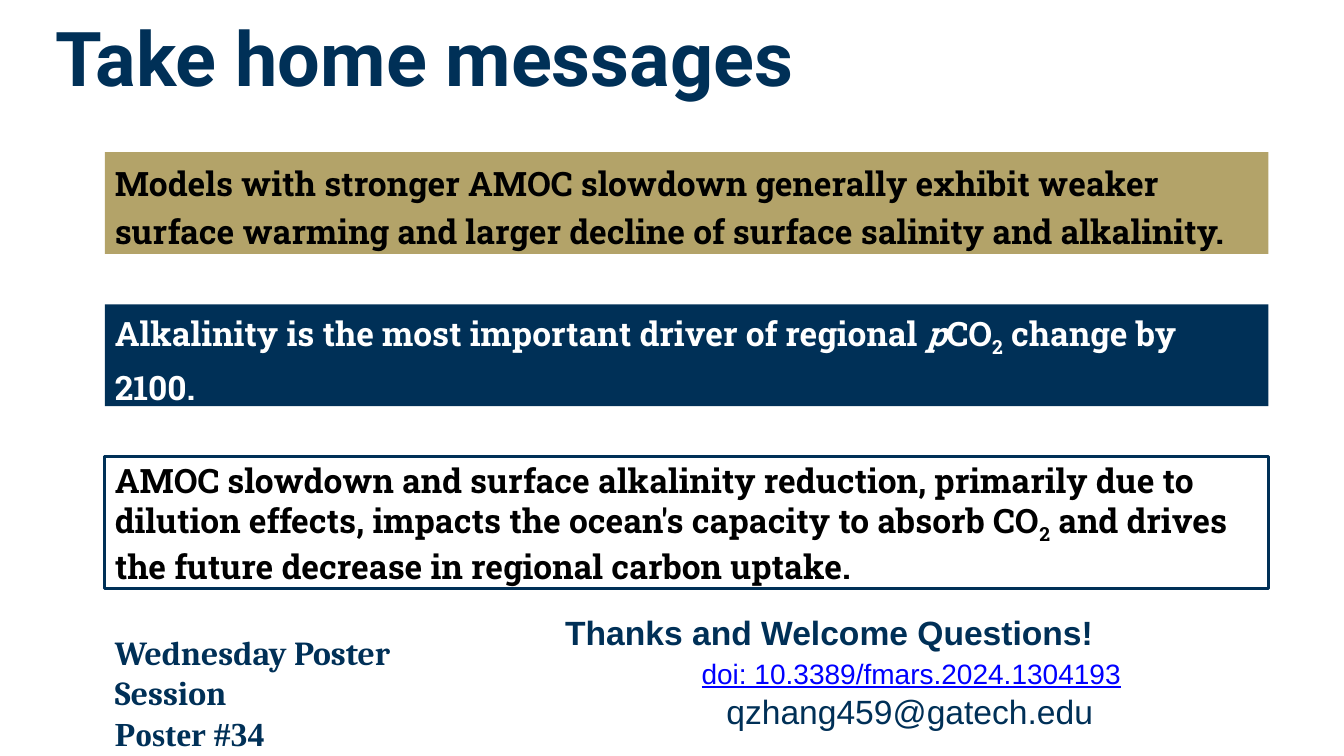
from pptx import Presentation
from pptx.dml.color import RGBColor
from pptx.enum.shapes import MSO_SHAPE
from pptx.enum.text import MSO_ANCHOR, MSO_AUTO_SIZE, PP_ALIGN
from pptx.util import Inches, Pt

NAVY = RGBColor(0x00, 0x30, 0x57)
GOLD = RGBColor(0xB3, 0xA3, 0x69)
WHITE = RGBColor(0xFF, 0xFF, 0xFF)
BLACK = RGBColor(0x00, 0x00, 0x00)
LINK_BLUE = RGBColor(0x00, 0x00, 0xFF)

# Content: a run is (text, style), style being "", "italic" or "sub"
TITLE = "Take home messages"
# runs, fill, text colour, outline, height, line spacing
MESSAGES = [
    ([("Models with stronger AMOC slowdown generally exhibit weaker surface "
       "warming and larger decline of surface salinity and alkalinity.", "")],
     GOLD, BLACK, None, 1.01, 1.2),
    ([("Alkalinity is the most important driver of regional ", ""),
      ("p", "italic"), ("CO", ""), ("2", "sub"), (" change by 2100.", "")],
     NAVY, WHITE, None, 1.01, 1.2),
    ([("AMOC slowdown and surface alkalinity reduction, primarily due to "
       "dilution effects, impacts the ocean's capacity to absorb CO", ""),
      ("2", "sub"),
      (" and drives the future decrease in regional carbon uptake.", "")],
     WHITE, BLACK, NAVY, 1.31, 1.0),
]
# box, alignment, lines of (text, font, size, colour, bold, underline, space before)
NOTES = [
    ((4.86, 6.02, 6.08, 1.31), PP_ALIGN.RIGHT, [
        ("Thanks and Welcome Questions!", "Arial", 24, NAVY, True, False, 0),
        ("qzhang459@gatech.edu", "Arial", 24, NAVY, False, False, 28)]),
    ((6.86, 6.46, 5.33, 0.44), PP_ALIGN.LEFT, [
        ("doi: 10.3389/fmars.2024.1304193", "Arial", 20, LINK_BLUE, False, True, 0)]),
    ((1.04, 6.22, 4.06, 0.91), PP_ALIGN.LEFT, [
        ("Wednesday Poster Session", "Cambria", 24, NAVY, True, False, 0),
        ("Poster #34", "Times New Roman", 24, NAVY, True, False, 0)]),
]
MSG_LEFT, MSG_TOP, MSG_WIDTH, MSG_GAP = 1.04, 1.51, 11.54, 0.5


def set_font(r, name, size, color, bold):
    r.font.name, r.font.size, r.font.bold = name, Pt(size), bold
    r.font.color.rgb = color


prs = Presentation()
prs.slide_width, prs.slide_height = Inches(13.33), Inches(7.5)
s = prs.slides.add_slide(prs.slide_layouts[5])

# Title
title = s.shapes.title
title.left, title.top = Inches(0.21), Inches(-0.25)
title.width, title.height = Inches(8), Inches(1.62)
tf = title.text_frame
tf.text = TITLE
tf.auto_size = MSO_AUTO_SIZE.NONE
tf.vertical_anchor = MSO_ANCHOR.MIDDLE
tf.paragraphs[0].alignment = PP_ALIGN.CENTER
set_font(tf.paragraphs[0].runs[0], "Roboto", 54, NAVY, True)

# Message boxes, stacked with equal gaps
top = MSG_TOP
for runs, fill, color, outline, height, spacing in MESSAGES:
    sp = s.shapes.add_shape(MSO_SHAPE.RECTANGLE, Inches(MSG_LEFT), Inches(top),
                            Inches(MSG_WIDTH), Inches(height))
    sp.shadow.inherit = False
    sp.fill.solid()
    sp.fill.fore_color.rgb = fill
    if outline is None:
        sp.line.fill.background()
    else:
        sp.line.color.rgb = outline
        sp.line.width = Pt(2)
    tf = sp.text_frame
    tf.word_wrap = True
    tf.vertical_anchor = MSO_ANCHOR.MIDDLE
    p = tf.paragraphs[0]
    p.alignment = PP_ALIGN.LEFT
    p.line_spacing = spacing
    for text, style in runs:
        r = p.add_run()
        r.text = text
        set_font(r, "Roboto Slab", 24, color, True)
        if style == "italic":
            r.font.italic = True
        elif style == "sub":
            r.font._element.set("baseline", "-25000")
    top += height + MSG_GAP

# Closing notes
for box, align, lines in NOTES:
    tf = s.shapes.add_textbox(*map(Inches, box)).text_frame
    tf.word_wrap = True
    for i, (text, font, size, color, bold, underline, before) in enumerate(lines):
        p = tf.paragraphs[0] if i == 0 else tf.add_paragraph()
        p.text = text
        p.alignment = align
        if before:
            p.space_before = Pt(before)
        set_font(p.runs[0], font, size, color, bold)
        p.runs[0].font.underline = underline

prs.save("out.pptx")
